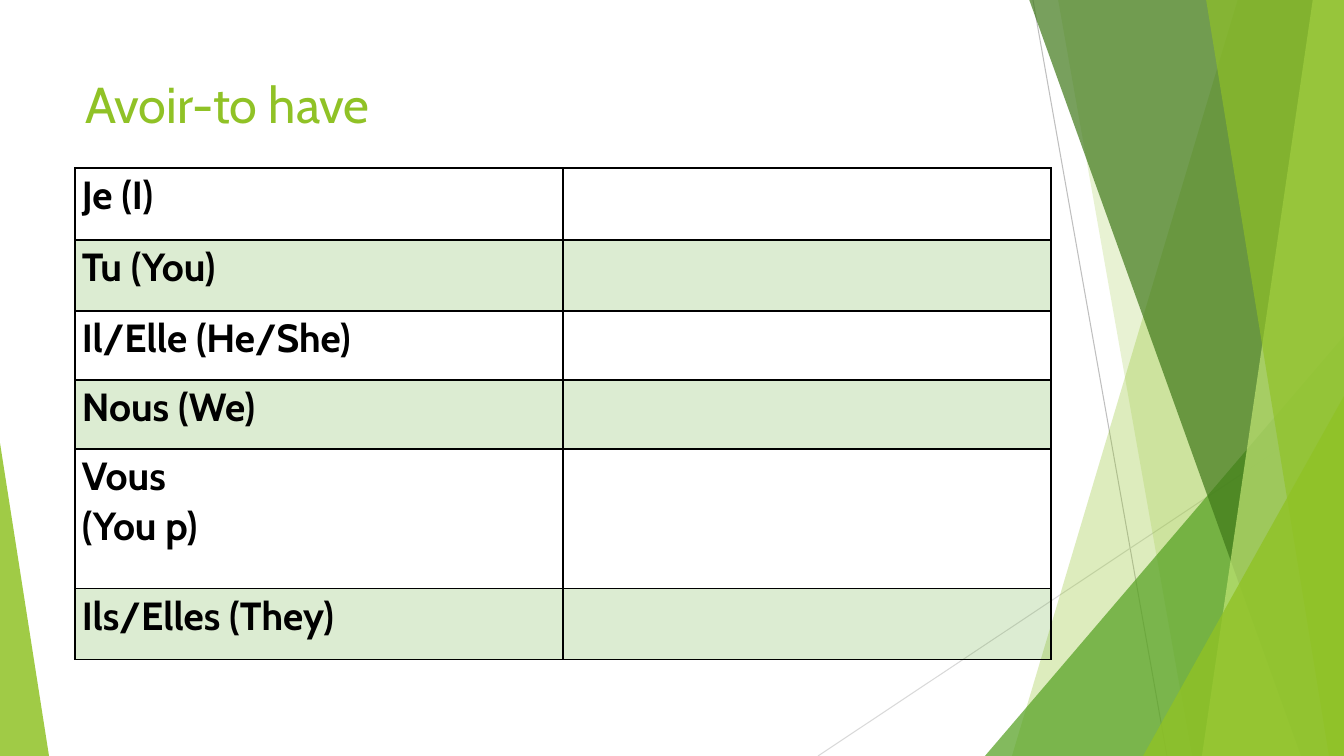
from lxml.etree import SubElement
from pptx import Presentation
from pptx.dml.color import RGBColor
from pptx.enum.shapes import MSO_CONNECTOR as Connector, MSO_SHAPE as Shape
from pptx.enum.text import MSO_ANCHOR as Anchor, PP_ALIGN as Align
from pptx.oxml import parse_xml
from pptx.oxml.ns import nsdecls, qn
from pptx.util import Pt

SCALE = 914400 / 100.8
WIDTH, HEIGHT = 1344, 756
COLORS = {
    "lime": "90C226",
    "green": "54A021",
    "forest": "3F7819",
    "pale": "C0E474",
    "gray": "BFBFBF",
    "silver": "D9D9D9",
    "black": "000000",
}
TITLE_FONT = {"name": "Cabin", "size": Pt(36), "bold": False}
CELL_FONT = {"name": "Cabin", "size": Pt(28), "bold": True}
CELL_MARGINS = {"margin_left": 7, "margin_right": 7, "margin_top": 0, "margin_bottom": 0}
PLAIN_TABLE = {"first_row": False, "horz_banding": False}

LINES = [
    ((1033, 0), (1167, HEIGHT), "gray"),
    ((WIDTH, 406), (818, HEIGHT), "silver"),
]
BACK_BANDS = [(1238, 1012, "lime", 30), (1058, 1192, "lime", 20)]
FRONT_BANDS = [
    (1029, 1301, "forest", 70),
    (1313, 1202, "pale", 70),
    (1206, 1329, "lime", 65),
]
BACK_TRIANGLE = (985, 336, 359, 1, "green", 72)
FRONT_TRIANGLES = [(1143, 396, 201, 1, "lime", 80), (0, 443, 49, 0, "lime", 85)]
ROWS = [
    ("Je (I)", 72),
    ("Tu (You)", 71),
    ("Il/Elle (He/She)", 69),
    ("Nous (We)", 69),
    ("Vous \v(You p)", 140),
    ("Ils/Elles (They)", 71),
]


def px(length):
    return round(length * SCALE)


def set_attributes(target, values):
    for name, value in values.items():
        setattr(target, name, value)


def rgb(color):
    return RGBColor.from_string(COLORS[color])


def set_font(font, values, color):
    set_attributes(font, values)
    font.color.rgb = rgb(color)


def fill_translucent(fill, properties, color, opacity):
    fill.solid()
    fill.fore_color.rgb = rgb(color)
    color_element = properties.find(qn("a:solidFill"))[0]
    SubElement(color_element, qn("a:alpha"), val=str(opacity * 1000))


def paint(shape, color, opacity):
    shape.shadow.inherit = False
    shape.line.fill.background()
    fill_translucent(shape.fill, shape.element.spPr, color, opacity)


def add_line(slide, start, end, color):
    points = [px(value) for value in (*start, *end)]
    line = slide.shapes.add_connector(Connector.STRAIGHT, *points)
    line.line.color.rgb = rgb(color)
    line.line.width = Pt(0.75)
    SubElement(line.element.spPr, qn("a:effectLst"))


def add_band(slide, top_x, bottom_x, color, opacity):
    builder = slide.shapes.build_freeform(top_x, -1, scale=SCALE)
    builder.add_line_segments([(WIDTH, -1), (WIDTH, HEIGHT), (bottom_x, HEIGHT)])
    paint(builder.convert_to_shape(), color, opacity)


def add_triangle(slide, left, top, width, apex, color, opacity):
    bounds = [px(value) for value in (left, top, width, HEIGHT - top)]
    triangle = slide.shapes.add_shape(Shape.ISOSCELES_TRIANGLE, *bounds)
    triangle.adjustments[0] = apex
    paint(triangle, color, opacity)


def add_decoration(slide):
    for line in LINES:
        add_line(slide, *line)
    for band in BACK_BANDS:
        add_band(slide, *band)
    add_triangle(slide, *BACK_TRIANGLE)
    for band in FRONT_BANDS:
        add_band(slide, *band)
    for triangle in FRONT_TRIANGLES:
        add_triangle(slide, *triangle)


def add_title(slide, text):
    title = slide.shapes.title
    bounds = {"left": 75, "top": 68, "width": 948, "height": 145}
    set_attributes(title, {name: px(value) for name, value in bounds.items()})
    frame = title.text_frame
    frame.text = text
    frame.vertical_anchor = Anchor.TOP
    paragraph = frame.paragraphs[0]
    paragraph.alignment = Align.LEFT
    set_font(paragraph.runs[0].font, TITLE_FONT, "lime")
    title.element.getparent().append(title.element)


def add_borders(cell):
    properties = cell._tc.get_or_add_tcPr()
    for index, side in enumerate("LRTB"):
        border = parse_xml(
            f'<a:ln{side} {nsdecls("a")} w="{Pt(1)}"><a:solidFill>'
            f'<a:srgbClr val="{COLORS["black"]}"/></a:solidFill></a:ln{side}>'
        )
        properties.insert(index, border)


def format_cell(cell, shaded):
    set_attributes(cell, {name: px(value) for name, value in CELL_MARGINS.items()})
    if shaded:
        fill_translucent(cell.fill, cell._tc.get_or_add_tcPr(), "green", 20)
    else:
        cell.fill.background()
    add_borders(cell)


def add_verb_table(slide):
    bounds = [px(value) for value in (75, 168, 976, sum(height for _, height in ROWS))]
    table = slide.shapes.add_table(len(ROWS), 2, *bounds).table
    set_attributes(table, PLAIN_TABLE)
    for index, (pronoun, height) in enumerate(ROWS):
        row = table.rows[index]
        row.height = px(height)
        for cell in row.cells:
            format_cell(cell, index % 2 == 1)
        row.cells[0].text = pronoun
        paragraph = row.cells[0].text_frame.paragraphs[0]
        paragraph.line_spacing = 1.07
        for run in paragraph.runs:
            set_font(run.font, CELL_FONT, "black")


def main():
    presentation = Presentation()
    presentation.slide_width = px(WIDTH)
    presentation.slide_height = px(HEIGHT)
    slide = presentation.slides.add_slide(presentation.slide_layouts[5])
    add_decoration(slide)
    add_title(slide, "Avoir-to have")
    add_verb_table(slide)
    presentation.save("out.pptx")


if __name__ == "__main__":
    main()
